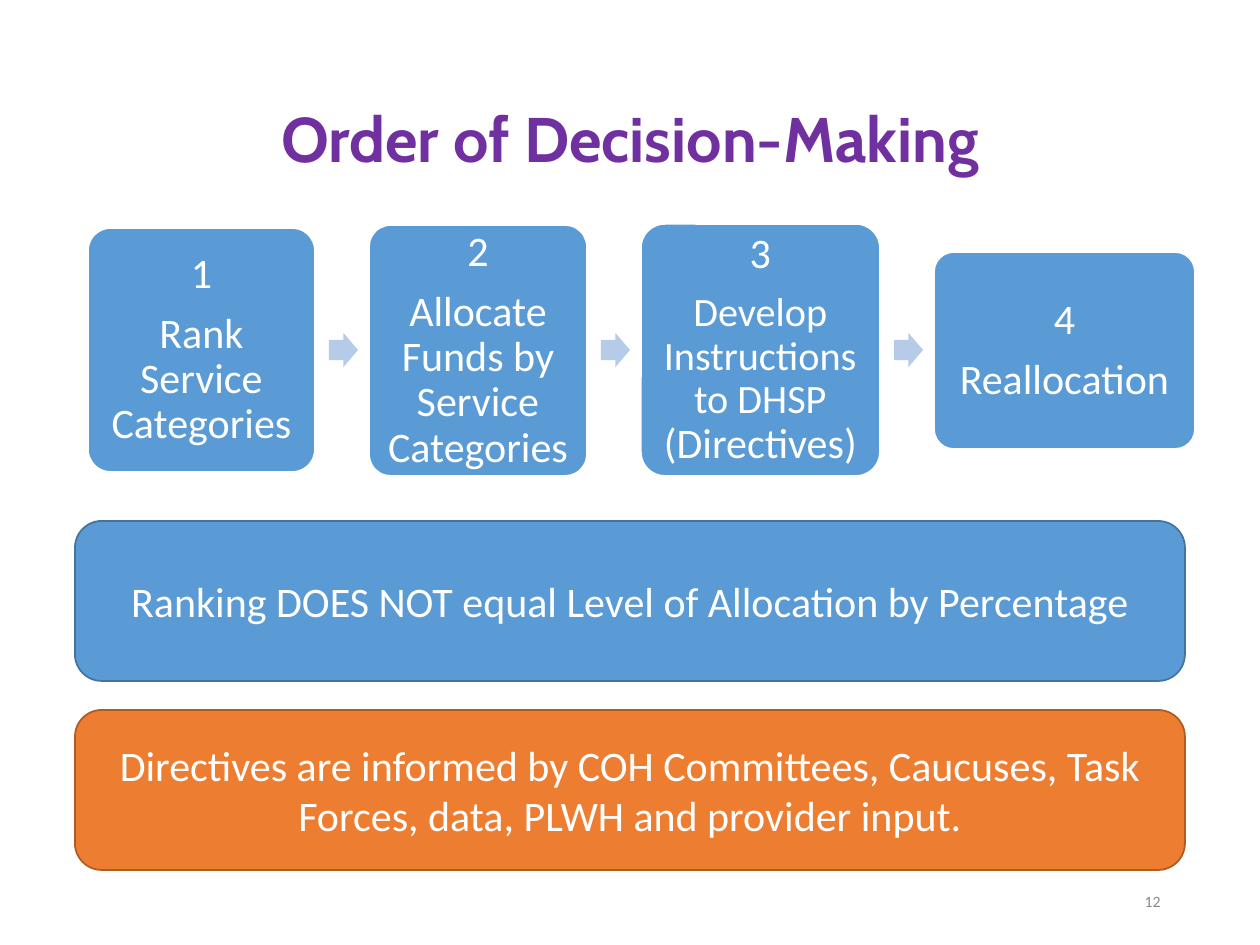
import pptx
import pptx.util
import pptx.dml.color
import pptx.enum.shapes
import pptx.enum.text

SHAPE = pptx.enum.shapes.MSO_SHAPE
ALIGN = pptx.enum.text.PP_ALIGN
MIDDLE = pptx.enum.text.MSO_ANCHOR.MIDDLE
Pt = pptx.util.Pt

PX = 914400 // 126
BLUE, ORANGE, WHITE = "5B9BD5", "ED7D31", "FFFFFF"

TITLE = "Order of Decision-Making"
# width, height, paragraphs of (text, size) runs
STEPS = [
    (227, 244, [[("1", 24)], [("Rank Service Categories", 24)]]),
    (218, 251, [[("2", 24)], [("Allocate Funds by Service Categories", 24)]]),
    (239, 252, [[("3", 24)],
                [("Develop Instructions to DHSP ", 23), ("(Directives)", 24)]]),
    (261, 197, [[("4", 24)], [("Reallocation", 24)]]),
]
# top, fill, line, text
NOTES = [
    (521, BLUE, "43739E",
     "Ranking DOES NOT equal Level of Allocation by Percentage"),
    (710, ORANGE, "AF5C24",
     "Directives are informed by COH Committees, Caucuses, Task Forces, "
     "data, PLWH and provider input."),
]
PAGE = "12"

STEPS_LEFT, STEPS_MIDDLE, STEP_GAP = 88, 350, 54
ARROW_W, ARROW_H, ARROW_OFFSET = 29, 34, 14
STEP_INSET = 10
NOTE_LEFT, NOTE_W, NOTE_H = 75, 1110, 160


def rgb(value):
    return pptx.dml.color.RGBColor.from_string(value)


def box(*lengths):
    return [n * PX for n in lengths]


def write(tf, paragraphs, color=WHITE, font="Calibri", bold=False,
          align=ALIGN.CENTER, spacing=None, after=None):
    tf.word_wrap = True
    tf.vertical_anchor = MIDDLE
    for i, runs in enumerate(paragraphs):
        p = tf.add_paragraph() if i else tf.paragraphs[0]
        p.alignment = align
        p.line_spacing = spacing
        p.space_after = after
        for text, size in runs:
            r = p.add_run()
            r.text = text
            r.font.name = font
            r.font.size = Pt(size)
            r.font.bold = bold
            r.font.color.rgb = rgb(color)


def add_shape(slide, kind, place, fill, line=None):
    s = slide.shapes.add_shape(kind, *box(*place))
    s.shadow.inherit = False
    s.fill.solid()
    s.fill.fore_color.rgb = rgb(fill)
    if line:
        s.line.color.rgb = rgb(line)
        s.line.width = Pt(1)
    else:
        s.line.fill.background()
    return s


def add_steps(slide):
    left = STEPS_LEFT
    for i, (width, height, paragraphs) in enumerate(STEPS):
        s = add_shape(slide, SHAPE.ROUNDED_RECTANGLE,
                      (left, STEPS_MIDDLE - height // 2, width, height), BLUE, WHITE)
        s.adjustments[0] = 0.1
        tf = s.text_frame
        tf.margin_left = tf.margin_right = STEP_INSET * PX
        tf.margin_top = tf.margin_bottom = 0
        write(tf, paragraphs, spacing=0.9, after=Pt(8.4))
        left += width
        if i < len(STEPS) - 1:
            arrow = add_shape(slide, SHAPE.RIGHT_ARROW,
                              (left + ARROW_OFFSET, STEPS_MIDDLE - ARROW_H // 2,
                               ARROW_W, ARROW_H), "B5CBE7")
            arrow.adjustments[0] = 0.6
        left += STEP_GAP


def main():
    prs = pptx.Presentation()
    prs.slide_width, prs.slide_height = box(1260, 945)
    slide = prs.slides.add_slide(prs.slide_layouts[5])

    title = slide.shapes.title
    title.left, title.top, title.width, title.height = box(87, 51, 1086, 183)
    write(title.text_frame, [[(TITLE, 36)]], "7030A0", "Cabin", True, spacing=0.9)

    add_steps(slide)
    for top, fill, line, text in NOTES:
        s = add_shape(slide, SHAPE.ROUNDED_RECTANGLE,
                      (NOTE_LEFT, top, NOTE_W, NOTE_H), fill, line)
        write(s.text_frame, [[(text, 24)]])

    number = slide.shapes.add_textbox(*box(890, 876, 283, 50))
    write(number.text_frame, [[(PAGE, 9)]], "898989", align=ALIGN.RIGHT)
    prs.save("out.pptx")


if __name__ == "__main__":
    main()
